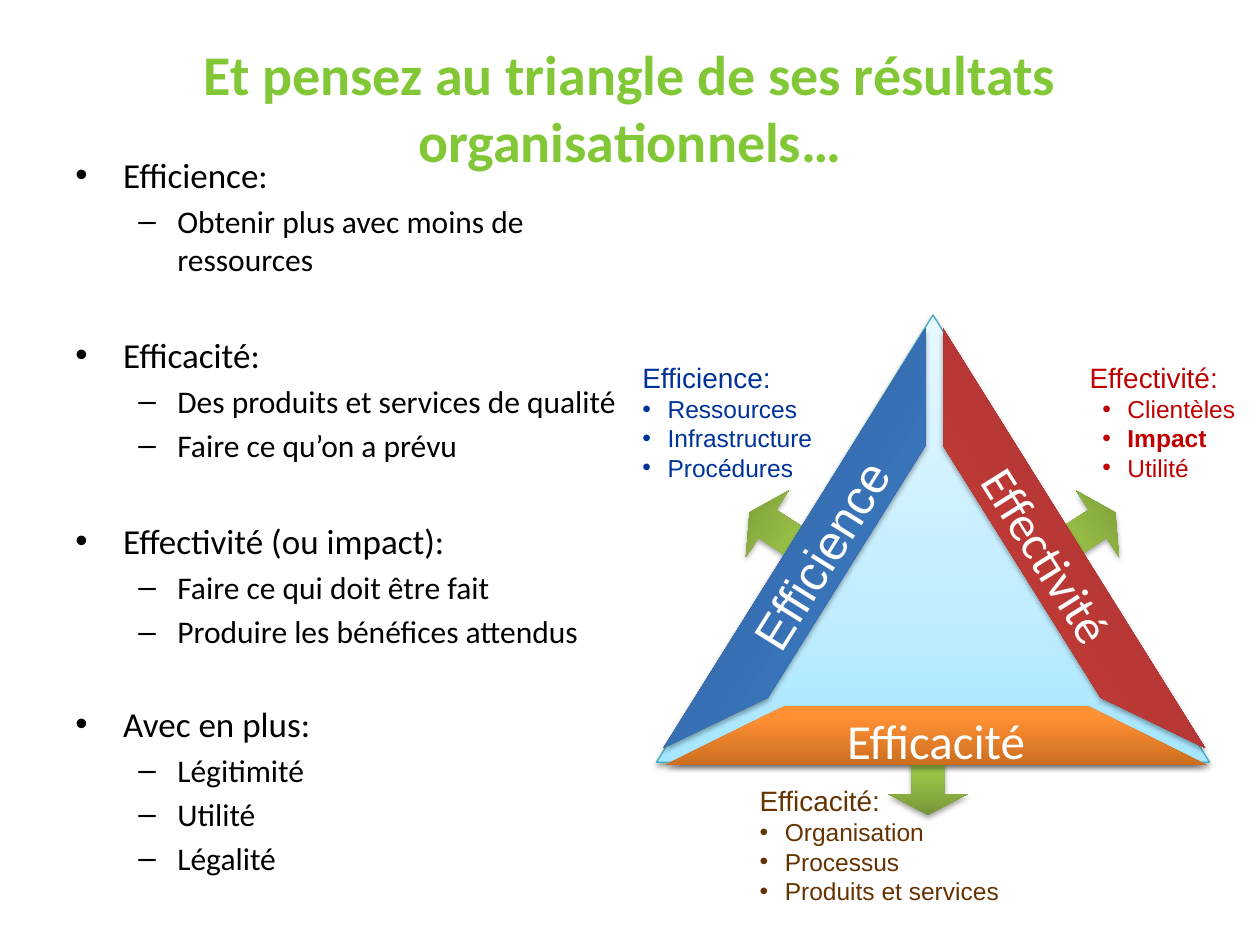
import math

import lxml.etree
import pptx
import pptx.dml.color
import pptx.enum.shapes
import pptx.enum.text
import pptx.oxml.ns
import pptx.util
from pptx.util import Inches

SHAPE = pptx.enum.shapes.MSO_SHAPE
ALIGN = pptx.enum.text.PP_ALIGN
ANCHOR = pptx.enum.text.MSO_ANCHOR
AUTO_SIZE = pptx.enum.text.MSO_AUTO_SIZE

COLORS = {
    "title": "82C836",
    "body": "000000",
    "label": "FFFFFF",
    "outline": "46AAC5",
    "efficience": "003399",
    "effectivite": "C00000",
    "efficacite": "663300",
}
GRADIENTS = {
    "green": [(0, "779737"), (80, "9BC348"), (100, "9DC746")],
    "sky": [(0, "A7E6FF"), (35, "C1EDFF"), (100, "E7F8FF")],
    "red": [(0, "9C2F2D"), (80, "CB3E3A"), (100, "CE3B37")],
    "orange": [(0, "CC6E20"), (80, "FF9034"), (100, "FF9136")],
    "blue": [(0, "2F5F99"), (80, "3D7CC7"), (100, "3A7CCB")],
}
# Heading, space before it in points, sub-points
DEFINITIONS = [
    ("Efficience:", 0, ["Obtenir plus avec moins de ressources"]),
    ("Efficacité:", 32, ["Des produits et services de qualité", "Faire ce qu’on a prévu"]),
    ("Effectivité (ou impact):", 32,
     ["Faire ce qui doit être fait", "Produire les bénéfices attendus"]),
    ("Avec en plus:", 30, ["Légitimité", "Utilité", "Légalité"]),
]
RIGHT_BAND = [(9.56, 5.94), (8.73, 5.54), (7.48, 3.54), (7.48, 2.61)]
RIGHT_BAND_CENTER = (8.315, 4.405)
MIRROR_AXIS = 7.415


def add_child(parent, tag, **attributes):
    child = lxml.etree.SubElement(parent, pptx.oxml.ns.qn(tag))
    for name, value in attributes.items():
        child.set(name, str(value))
    return child


def add_run(paragraph, text, size, color, font="Calibri", bold=False):
    run = paragraph.add_run()
    run.text = text
    run.font.size = pptx.util.Pt(size)
    run.font.name = font
    run.font.bold = bold
    run.font.color.rgb = pptx.dml.color.RGBColor.from_string(COLORS[color])


def set_bullet(paragraph, char, margin, hanging):
    properties = paragraph._p.get_or_add_pPr()
    properties.set("marL", str(Inches(margin)))
    properties.set("indent", str(-Inches(hanging)))
    add_child(properties, "a:buFont", typeface="Arial")
    add_child(properties, "a:buChar", char=char)


def add_text_frame(slide, left, top, width, height):
    box = slide.shapes.add_textbox(Inches(left), Inches(top), Inches(width), Inches(height))
    box.text_frame.word_wrap = True
    return box.text_frame


def add_title(slide):
    frame = add_text_frame(slide, 0.5, 0.3, 9, 1.09)
    frame.vertical_anchor = ANCHOR.MIDDLE
    title = frame.paragraphs[0]
    title.alignment = ALIGN.CENTER
    add_run(title, "Et pensez au triangle de ses résultats organisationnels…", 32, "title", bold=True)


def add_definitions(slide):
    frame = add_text_frame(slide, 0.5, 1.17, 4.66, 6.28)
    for heading, gap, points in DEFINITIONS:
        paragraph = frame.add_paragraph() if gap else frame.paragraphs[0]
        paragraph.space_before = pptx.util.Pt(gap)
        set_bullet(paragraph, "•", 0.38, 0.38)
        add_run(paragraph, heading, 20, "body")
        for point in points:
            paragraph = frame.add_paragraph()
            paragraph.level = 1
            paragraph.space_before = pptx.util.Pt(3.6)
            set_bullet(paragraph, "–", 0.81, 0.31)
            add_run(paragraph, point, 18, "body")


def add_callout(slide, left, top, width, color, heading, points, margin=0.2, strong=None):
    frame = add_text_frame(slide, left, top, width, 1.08)
    frame.word_wrap = False
    frame.auto_size = AUTO_SIZE.SHAPE_TO_FIT_TEXT
    add_run(frame.paragraphs[0], heading, 16, color, "Arial")
    for point in points:
        paragraph = frame.add_paragraph()
        set_bullet(paragraph, "•", margin, 0.2)
        add_run(paragraph, point, 14, color, "Arial", point == strong)


def style_solid(shape, gradient, outline=None, shadow=(3.1, 1.8, 35)):
    """Give a bottom-to-top gradient, an optional outline and a shadow (blur, distance, opacity)."""
    properties = shape._element.spPr
    fill = add_child(properties, "a:gradFill", rotWithShape=1)
    stops = add_child(fill, "a:gsLst")
    for position, color in GRADIENTS[gradient]:
        stop = add_child(stops, "a:gs", pos=position * 1000)
        add_child(stop, "a:srgbClr", val=color)
    add_child(fill, "a:lin", ang=270 * 60000, scaled=0)

    if outline:
        shape.line.color.rgb = pptx.dml.color.RGBColor.from_string(COLORS[outline])
        shape.line.width = pptx.util.Pt(0.75)
    else:
        shape.line.fill.background()

    blur, distance, opacity = shadow
    shape.shadow.inherit = False
    effects = properties.find(pptx.oxml.ns.qn("a:effectLst"))
    outer = add_child(effects, "a:outerShdw", blurRad=pptx.util.Pt(blur),
                      dist=pptx.util.Pt(distance), dir=90 * 60000, rotWithShape=0)
    add_child(add_child(outer, "a:srgbClr", val="000000"), "a:alpha", val=opacity * 1000)


def add_solid(slide, kind, left, top, width, height, adjustments, rotation=0):
    shape = slide.shapes.add_shape(kind, Inches(left), Inches(top), Inches(width), Inches(height))
    for index, value in enumerate(adjustments):
        shape.adjustments[index] = value
    shape.rotation = rotation
    return shape


def add_arrow(slide, left, top, rotation=0):
    arrow = add_solid(slide, SHAPE.DOWN_ARROW, left, top, 0.63, 0.42, (0.42, 0.4), rotation)
    style_solid(arrow, "green")


def add_label(shape, text, font="Calibri"):
    frame = shape.text_frame
    frame.word_wrap = False
    frame.vertical_anchor = ANCHOR.MIDDLE
    frame.paragraphs[0].alignment = ALIGN.CENTER
    add_run(frame.paragraphs[0], text, 28, "label", font)


def add_side_band(slide, points, center, rotation, gradient, text, font="Calibri"):
    """Draw a band lying flat, then turn it so that its corners land on the given points."""
    angle = math.radians(-rotation)
    center_x, center_y = center
    flat = []
    for x, y in points:
        dx, dy = x - center_x, y - center_y
        flat.append((Inches(center_x + dx * math.cos(angle) - dy * math.sin(angle)),
                     Inches(center_y + dx * math.sin(angle) + dy * math.cos(angle))))
    builder = slide.shapes.build_freeform(*flat[0])
    builder.add_line_segments(flat[1:], close=True)
    band = builder.convert_to_shape()
    band.rotation = rotation
    style_solid(band, gradient)
    add_label(band, text, font)
    band.text_frame._txBody.bodyPr.set("rot", str(180 * 60000))


def mirror(point):
    return 2 * MIRROR_AXIS - point[0], point[1]


def main():
    deck = pptx.Presentation()
    deck.slide_width, deck.slide_height = Inches(10), Inches(7.5)
    slide = deck.slides.add_slide(deck.slide_layouts[6])

    add_title(slide)
    add_definitions(slide)

    add_arrow(slide, 8.36, 3.97, 237.2)
    triangle = add_solid(slide, SHAPE.ISOSCELES_TRIANGLE, 5.21, 2.5, 4.39, 3.55, (0.5,))
    style_solid(triangle, "sky", "outline", (3.1, 1.6, 38))
    add_side_band(slide, RIGHT_BAND, RIGHT_BAND_CENTER, 238, "red", "Effectivité")
    add_callout(slide, 8.55, 2.81, 1.36, "effectivite", "Effectivité:",
                ["Clientèles", "Impact", "Utilité"], margin=0.3, strong="Impact")

    add_arrow(slide, 7.05, 6.05)
    base = add_solid(slide, SHAPE.TRAPEZOID, 5.28, 5.6, 4.3, 0.47, (2.04,))
    style_solid(base, "orange")
    add_label(base, "Efficacité")
    add_callout(slide, 5.93, 6.17, 2.11, "efficacite", "Efficacité:",
                ["Organisation", "Processus", "Produits et services"])

    add_arrow(slide, 5.81, 3.97, 122.8)
    add_side_band(slide, [mirror(point) for point in RIGHT_BAND], mirror(RIGHT_BAND_CENTER),
                  122, "blue", "Efficience", "Arial")
    add_callout(slide, 5, 2.81, 1.55, "efficience", "Efficience:",
                ["Ressources", "Infrastructure", "Procédures"])

    deck.save("out.pptx")


if __name__ == "__main__":
    main()
